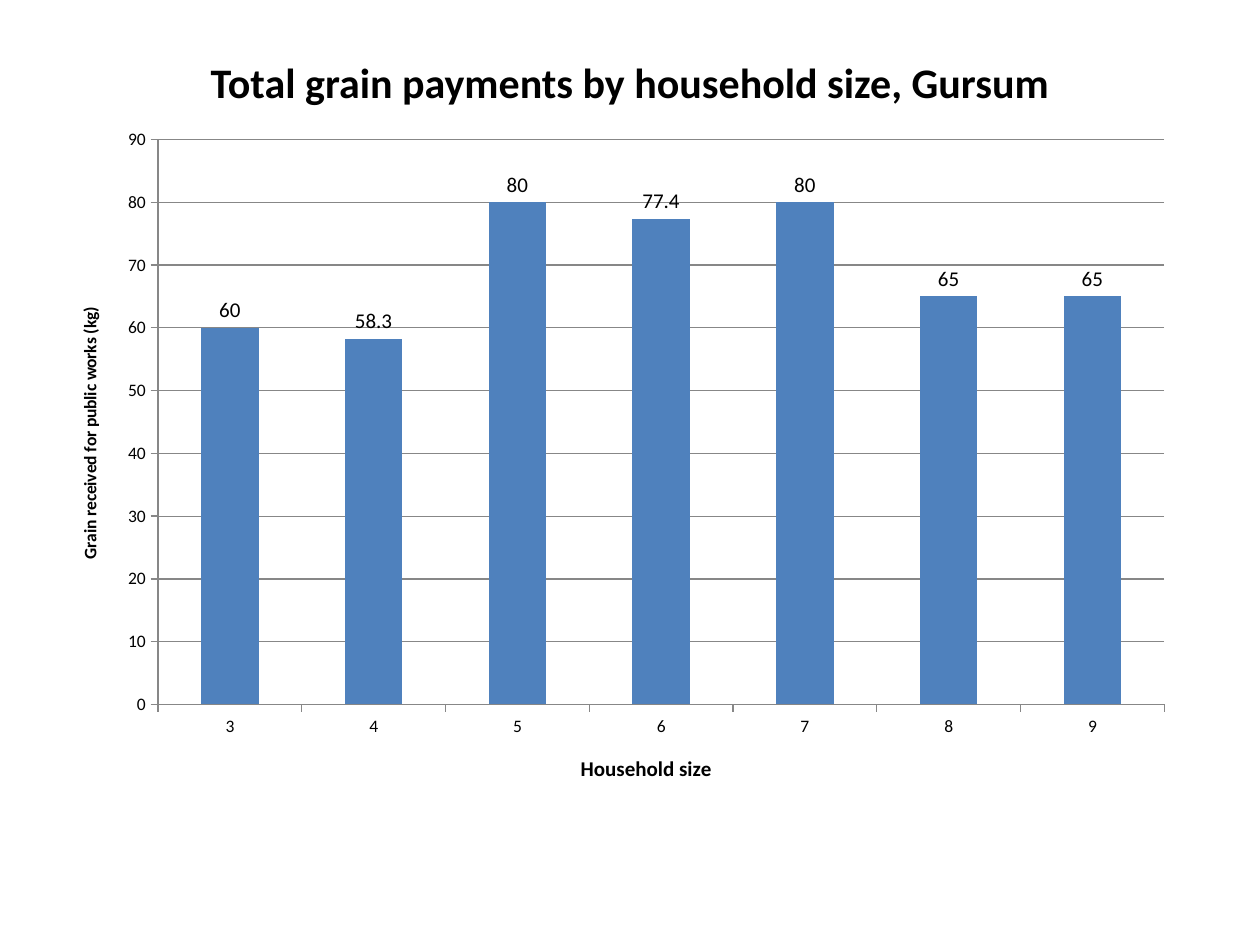
from pptx import Presentation
from pptx import util as u
from pptx.chart import data as chart_data
from pptx.dml.color import RGBColor
from pptx.enum import chart as ch, text

BLACK = RGBColor(0x00, 0x00, 0x00)
GRAY = RGBColor(0x87, 0x87, 0x87)
BLUE = RGBColor(0x4F, 0x81, 0xBD)
FONT = "Calibri"


def style_font(font, size, bold=False, color=BLACK):
    font.name = FONT
    font.size = u.Pt(size)
    font.bold = bold
    font.color.rgb = color


def write(frame, content, size, bold=False, align=text.PP_ALIGN.CENTER):
    paragraph = frame.paragraphs[0]
    paragraph.alignment = align
    run = paragraph.add_run()
    run.text = content
    style_font(run.font, size, bold)


class SlideBuilder:
    def __init__(self, slide):
        self.slide = slide

    def heading(self, content, left, top, width, height, size):
        box = self.slide.shapes.add_textbox(*map(u.Inches, (left, top, width, height)))
        frame = box.text_frame
        frame.word_wrap = True
        frame.vertical_anchor = text.MSO_ANCHOR.MIDDLE
        write(frame, content, size, bold=True)

    def axis(self, axis, title, title_size, gridlines):
        axis.has_title = True
        write(axis.axis_title.text_frame, title, title_size, bold=True)
        axis.has_major_gridlines = gridlines
        if gridlines:
            axis.major_gridlines.format.line.color.rgb = GRAY
        axis.major_tick_mark = ch.XL_TICK_MARK.OUTSIDE
        axis.minor_tick_mark = ch.XL_TICK_MARK.NONE
        axis.format.line.color.rgb = GRAY
        style_font(axis.tick_labels.font, 10)

    def columns(self, sizes, payments, left, top, width, height):
        grain = chart_data.CategoryChartData()
        grain.categories = sizes
        grain.add_series("Series 1", payments)
        chart = self.slide.shapes.add_chart(
            ch.XL_CHART_TYPE.COLUMN_CLUSTERED,
            *map(u.Inches, (left, top, width, height)), grain).chart
        chart.has_legend = False
        chart.has_title = False
        style_font(chart.font, 10)
        self.axis(chart.category_axis, "Household size", 12, False)
        self.axis(chart.value_axis, "Grain received for public works (kg)", 10, True)
        chart.value_axis.minimum_scale = 0
        chart.value_axis.maximum_scale = 90
        chart.value_axis.major_unit = 10

        plot = chart.plots[0]
        plot.gap_width = 150
        plot.vary_by_categories = False
        fill = plot.series[0].format.fill
        fill.solid()
        fill.fore_color.rgb = BLUE
        plot.has_data_labels = True
        labels = plot.data_labels
        labels.show_value = True
        labels.position = ch.XL_LABEL_POSITION.OUTSIDE_END
        style_font(labels.font, 12)


def main():
    deck = Presentation()
    deck.slide_width = u.Inches(10)
    deck.slide_height = u.Inches(7.5)
    builder = SlideBuilder(deck.slides.add_slide(deck.slide_layouts[6]))
    builder.heading("Total grain payments by household size, Gursum",
                    0.5, 0.3, 9, 0.7, 24)
    builder.columns([str(size) for size in range(3, 10)],
                    [60, 58.3, 80, 77.4, 80, 65, 65],
                    0.42, 0.92, 9, 5.5)
    deck.save("out.pptx")


if __name__ == "__main__":
    main()
